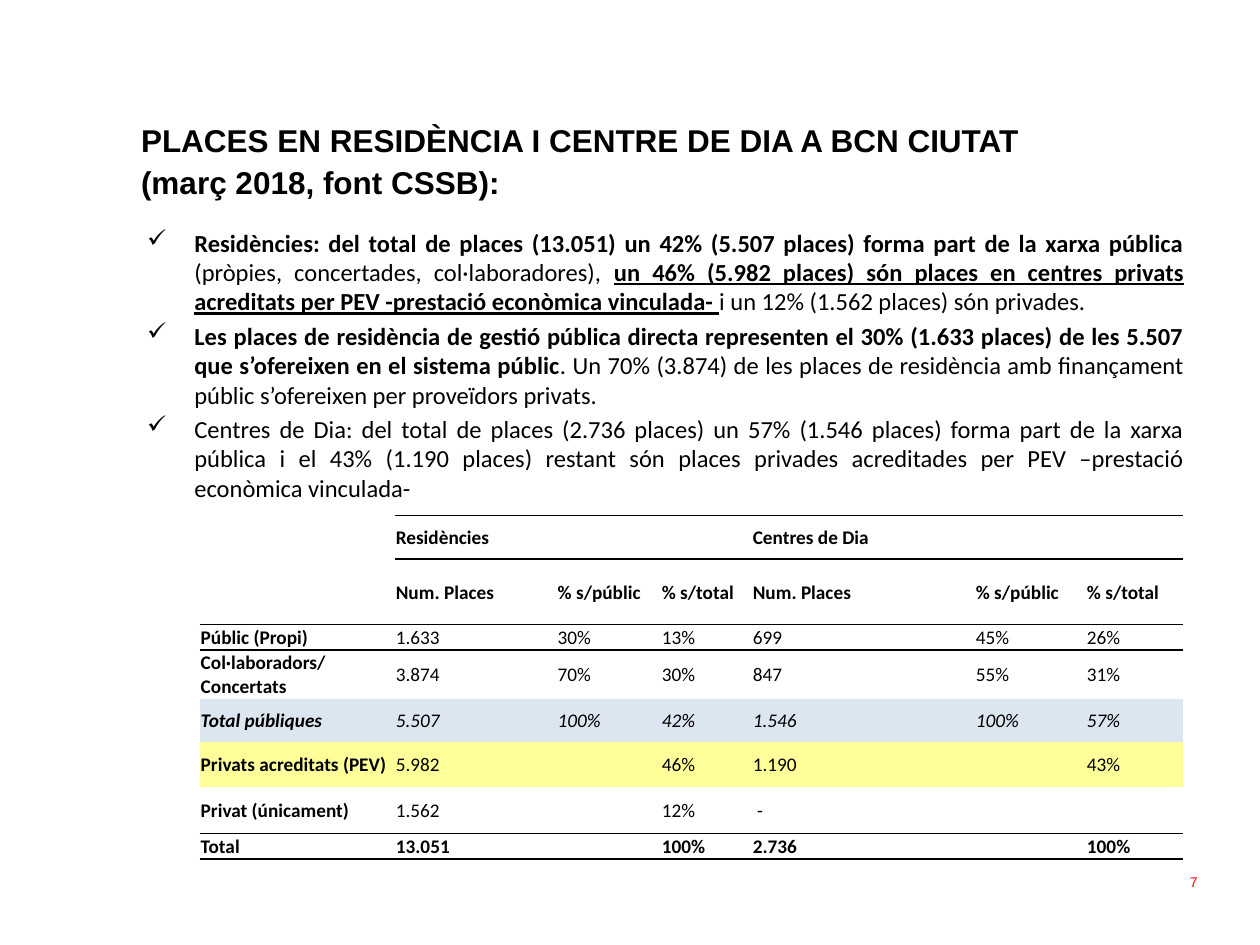
from dataclasses import dataclass

from lxml.etree import SubElement
from pptx import Presentation
from pptx.dml.color import RGBColor
from pptx.enum.text import MSO_ANCHOR, PP_ALIGN
from pptx.oxml.ns import qn
from pptx.util import Pt

COLORS = {"text": "000000", "page_number": "FF0000", "plain": "FFFFFF",
          "public_total": "DCE6F1", "accredited": "FFFF99"}


@dataclass
class Span:
    text: str
    bold: bool = False
    underline: bool = False


@dataclass
class Row:
    height: float
    values: list[str]
    fill: str = "plain"
    bold: bool = False
    italic: bool = False


BULLETS = [
    [Span("Residències: del total de places (13.051) un 42% (5.507 places) forma part "
          "de la xarxa pública ", bold=True),
     Span("(pròpies, concertades, col·laboradores), "),
     Span("un 46% (5.982 places) són places en centres privats acreditats per PEV "
          "-prestació econòmica vinculada- ", bold=True, underline=True),
     Span("i un 12% (1.562 places) són privades. ")],
    [Span("Les places de residència de gestió pública directa representen el 30% "
          "(1.633 places) de les 5.507 que s’ofereixen en el sistema públic", bold=True),
     Span(". Un 70% (3.874) de les places de residència amb finançament públic "
          "s’ofereixen per proveïdors privats. ")],
    [Span("Centres de Dia: del total de places (2.736 places) un 57% (1.546 places) "
          "forma part de la xarxa pública i el 43% (1.190 places) restant són places "
          "privades acreditades per PEV –prestació econòmica vinculada-")],
]

MEASURES = ["Num. Places", "% s/públic", "% s/total"]
ROWS = [
    Row(25, ["", "Residències", "", "", "Centres de Dia", "", ""], bold=True),
    Row(37.5, ["", *MEASURES, *MEASURES], bold=True),
    Row(14.5, ["Públic (Propi)", "1.633", "30%", "13%", "699", "45%", "26%"]),
    Row(28, ["Col·laboradors/Concertats", "3.874", "70%", "30%", "847", "55%", "31%"]),
    Row(24.5, ["Total públiques", "5.507", "100%", "42%", "1.546", "100%", "57%"],
        fill="public_total", italic=True),
    Row(26, ["Privats acreditats (PEV)", "5.982", "", "46%", "1.190", "", "43%"],
        fill="accredited"),
    Row(26.5, ["Privat (únicament)", "1.562", "", "12%", "\u00a0-", "", ""]),
    Row(14.5, ["Total", "13.051", "", "100%", "2.736", "", "100%"], bold=True),
]
COLUMN_WIDTHS = [111.5, 92.5, 59.5, 52, 127.5, 63.5, 55.5]
RULE_START_COLUMN = {0: 1, 1: 1, 2: 0, 7: 0, 8: 0}
NO_STYLE = "{2D5ABB26-0587-4C30-8999-92F81FD0307C}"


def set_font(font, name: str, size: float, color: str = "text", bold: bool = False) -> None:
    font.name = name
    font.size = Pt(size)
    font.bold = bold
    font.color.rgb = RGBColor.from_string(COLORS[color])


def add_box(page, left: float, top: float, width: float, height: float, anchor):
    frame = page.shapes.add_textbox(Pt(left), Pt(top), Pt(width), Pt(height)).text_frame
    frame.word_wrap = True
    frame.vertical_anchor = anchor
    return frame


def add_title(page) -> None:
    frame = add_box(page, 73.5, 67.7, 611, 67.7, MSO_ANCHOR.MIDDLE)
    frame.margin_top, frame.margin_bottom = Pt(0), Pt(22)
    para = frame.paragraphs[0]
    para.text = "PLACES EN RESIDÈNCIA I CENTRE DE DIA A BCN CIUTAT \v(març 2018, font CSSB):"
    para.line_spacing = Pt(24)
    set_font(para.font, "Arial", 18, bold=True)


def add_bullets(page) -> None:
    frame = add_box(page, 77, 126.5, 607, 356, MSO_ANCHOR.TOP)
    for index, spans in enumerate(BULLETS):
        para = frame.add_paragraph() if index else frame.paragraphs[0]
        para.alignment = PP_ALIGN.JUSTIFY
        para.space_before = Pt(2.8 if index else 0)
        properties = para._p.get_or_add_pPr()
        properties.set("marL", str(Pt(27)))
        properties.set("indent", str(-Pt(27)))
        SubElement(properties, qn("a:buChar"), char="✓")
        set_font(para.font, "Calibri", 14)
        for span in spans:
            run = para.add_run()
            run.text = span.text
            run.font.bold = span.bold
            run.font.underline = span.underline


def add_rule(cell, side: str) -> None:
    line = SubElement(cell._tc.get_or_add_tcPr(), qn(f"a:ln{side}"), w=str(Pt(1)))
    SubElement(SubElement(line, qn("a:solidFill")), qn("a:srgbClr"), val=COLORS["text"])


def fill_cell(cell, row: Row, row_index: int, column: int) -> None:
    for side, boundary in (("T", row_index), ("B", row_index + 1)):
        if column >= RULE_START_COLUMN.get(boundary, len(COLUMN_WIDTHS)):
            add_rule(cell, side)
    cell.fill.solid()
    cell.fill.fore_color.rgb = RGBColor.from_string(COLORS[row.fill])
    cell.vertical_anchor = MSO_ANCHOR.MIDDLE
    cell.margin_left = cell.margin_right = cell.margin_top = Pt(0.7)
    cell.margin_bottom = Pt(0)
    para = cell.text_frame.paragraphs[0]
    para.alignment = PP_ALIGN.JUSTIFY
    set_font(para.font, "Calibri", 11, bold=row.bold or column == 0)
    para.font.italic = row.italic
    if row.values[column]:
        para.add_run().text = row.values[column]
    else:
        SubElement(para._p, qn("a:endParaRPr"), sz="1100")


def add_places_table(page) -> None:
    frame = page.shapes.add_table(len(ROWS), len(COLUMN_WIDTHS), Pt(114), Pt(294.5),
                                  Pt(sum(COLUMN_WIDTHS)), Pt(sum(row.height for row in ROWS)))
    table = frame.table
    table.first_row = table.horz_banding = False
    table._tbl.tblPr.find(qn("a:tableStyleId")).text = NO_STYLE
    for column, width in zip(table.columns, COLUMN_WIDTHS):
        column.width = Pt(width)
    for row_index, row in enumerate(ROWS):
        table.rows[row_index].height = Pt(row.height)
        for column in range(len(COLUMN_WIDTHS)):
            fill_cell(table.cell(row_index, column), row, row_index, column)


def add_page_number(page) -> None:
    para = add_box(page, 523.5, 489.5, 168, 29, MSO_ANCHOR.MIDDLE).paragraphs[0]
    para.text = "7"
    para.alignment = PP_ALIGN.RIGHT
    set_font(para.font, "Arial", 8, "page_number")


def main() -> None:
    deck = Presentation()
    deck.slide_width, deck.slide_height = Pt(720), Pt(540)
    page = deck.slides.add_slide(deck.slide_layouts[6])
    add_title(page)
    add_bullets(page)
    add_page_number(page)
    add_places_table(page)
    deck.save("out.pptx")


if __name__ == "__main__":
    main()
